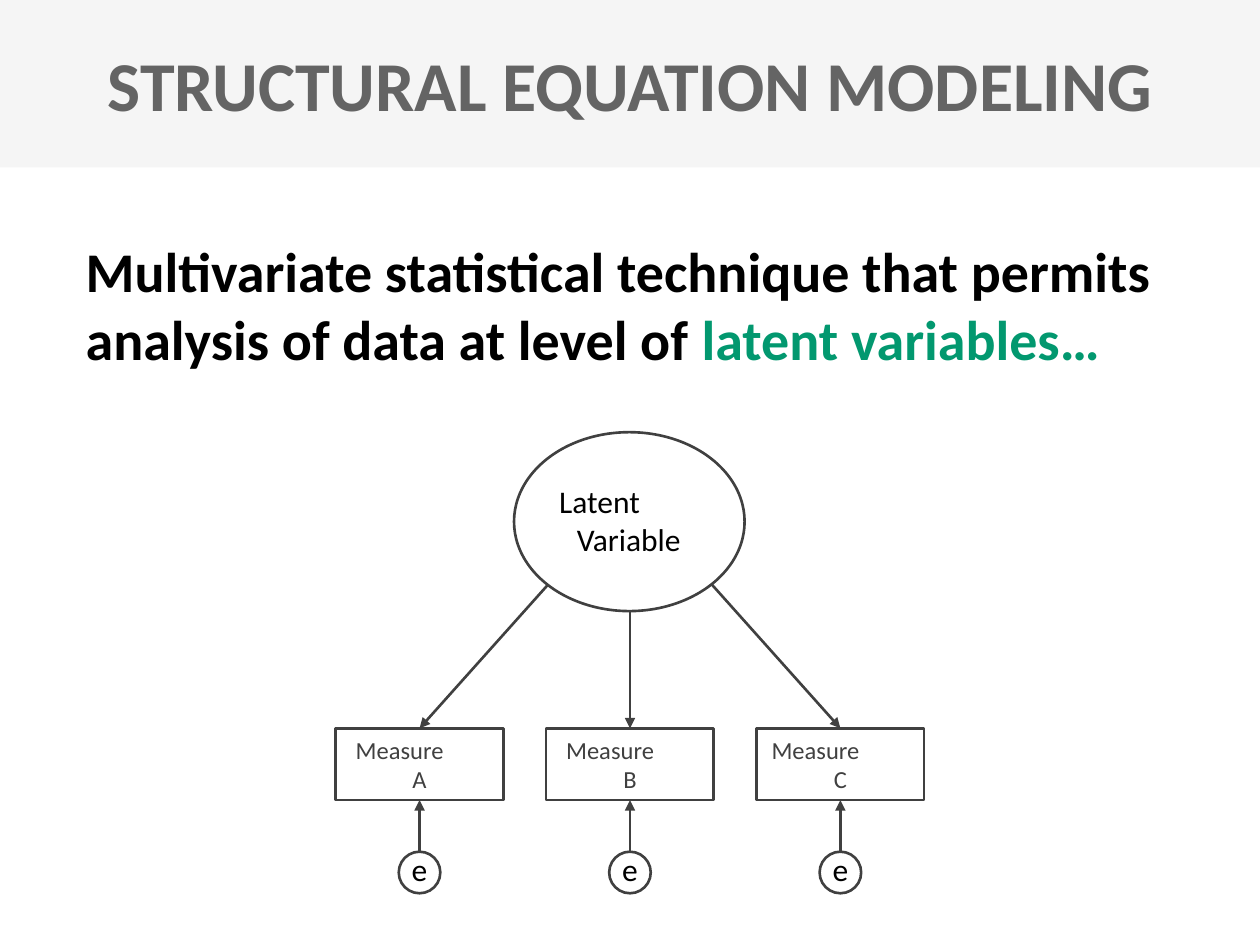
from lxml.etree import SubElement
from pptx import Presentation
from pptx.dml.color import RGBColor
from pptx.enum.shapes import MSO_CONNECTOR, MSO_SHAPE
from pptx.enum.text import MSO_ANCHOR, MSO_AUTO_SIZE, PP_ALIGN
from pptx.oxml.ns import qn
from pptx.util import Inches, Pt

FONT = "Calibri"
BAND, TITLE, BLACK, ACCENT, OUTLINE = "F5F5F5", "646464", "000000", "02986F", "404040"


def rgb(value):
    return RGBColor.from_string(value)


def place(shape, left, top, width, height):
    shape.left, shape.top = Inches(left), Inches(top)
    shape.width, shape.height = Inches(width), Inches(height)


def style_run(run, size, color, bold=False):
    font = run.font
    font.name, font.size, font.bold = FONT, Pt(size), bold
    font.color.rgb = rgb(color)


def add_label(frame, lines, size, color, indent=0):
    """Centre the lines; with an indent, the first line is set from the left."""
    frame.word_wrap = True
    frame.text = "\n".join(lines)
    for paragraph in frame.paragraphs:
        paragraph.alignment = PP_ALIGN.CENTER
        style_run(paragraph.runs[0], size, color)
    if indent:
        first = frame.paragraphs[0]
        first.alignment = PP_ALIGN.LEFT
        first._p.get_or_add_pPr().set("marL", str(Inches(indent)))


def add_outlined(slide, preset, left, top, width, height):
    shape = slide.shapes.add_shape(
        preset, Inches(left), Inches(top), Inches(width), Inches(height))
    shape.shadow.inherit = False
    shape.fill.background()
    shape.line.color.rgb = rgb(OUTLINE)
    shape.line.width = Pt(1.5)
    return shape


def add_text(slide, left, top, width, height, lines, size, indent=0):
    box = slide.shapes.add_textbox(
        Inches(left), Inches(top), Inches(width), Inches(height))
    add_label(box.text_frame, lines, size, BLACK, indent)


def add_arrow(slide, x1, y1, x2, y2):
    arrow = slide.shapes.add_connector(
        MSO_CONNECTOR.STRAIGHT, Inches(x1), Inches(y1), Inches(x2), Inches(y2))
    arrow.line.color.rgb = rgb(OUTLINE)
    arrow.line.width = Pt(1.5)
    SubElement(arrow.line._get_or_add_ln(), qn("a:tailEnd"), type="triangle")
    SubElement(arrow._element.spPr, qn("a:effectLst"))


def add_header(slide, left, top, width, height):
    title = slide.shapes.title
    band = slide.shapes.add_shape(
        MSO_SHAPE.RECTANGLE, Inches(left), Inches(top), Inches(width), Inches(height))
    band.shadow.inherit = False
    band.fill.solid()
    band.fill.fore_color.rgb = rgb(BAND)
    band.line.fill.background()
    title.element.addprevious(band.element)

    place(title, left, top + 0.44, width, 0.45)
    frame = title.text_frame
    frame.text = "STRUCTURAL EQUATION MODELING"
    frame.auto_size = MSO_AUTO_SIZE.NONE
    frame.vertical_anchor = MSO_ANCHOR.MIDDLE
    frame.paragraphs[0].alignment = PP_ALIGN.CENTER
    style_run(frame.paragraphs[0].runs[0], 40, TITLE, True)


def add_definition(slide, left, top, width, height):
    body = slide.placeholders[1]
    place(body, left, top, width, height)
    frame = body.text_frame
    frame.auto_size = MSO_AUTO_SIZE.NONE
    paragraph = frame.paragraphs[0]
    properties = paragraph._p.get_or_add_pPr()
    properties.set("marL", "0")
    properties.set("indent", "0")
    SubElement(properties, qn("a:buNone"))
    paragraph.space_before = Pt(0)
    for text, color in (
        ("Multivariate statistical technique that permits "
         "analysis of data at level of ", BLACK),
        ("latent variables…", ACCENT),
    ):
        run = paragraph.add_run()
        run.text = text
        style_run(run, 32, color, True)


def add_measure(slide, center, top, letter, indent):
    """Draw a measure box with its error term and arrow below."""
    width, height, error_size = 1.33, 0.57, 0.33
    error_top = top + 0.98
    box = add_outlined(
        slide, MSO_SHAPE.RECTANGLE, center - width / 2, top, width, height)
    add_label(box.text_frame, ["Measure", letter], 14, OUTLINE, indent)
    add_outlined(slide, MSO_SHAPE.OVAL, center - error_size / 2, error_top,
                 error_size, error_size)
    add_text(slide, center - 0.25, error_top - 0.06, 0.5, 0.4, ["e"], 18)
    add_arrow(slide, center, error_top, center, top + height)


def add_model(slide, left, top, width):
    """Draw the latent variable above its three measures."""
    middle = left + width / 2
    measure_top = top + 2.35
    add_outlined(slide, MSO_SHAPE.OVAL, middle - 0.92, top, 1.83, 1.42)
    add_text(slide, middle - 0.97, top + 0.35, 1.92, 0.71,
             ["Latent", "Variable"], 18, indent=0.31)
    measures = (("A", 0.06, 1.21), ("B", 0.06, 1.42), ("C", 0.02, 1.21))
    for column, (letter, indent, arrow_start) in enumerate(measures, start=-1):
        center = middle + column * 1.67
        add_measure(slide, center, measure_top, letter, indent)
        add_arrow(slide, middle + column * 0.65, top + arrow_start,
                  center, measure_top)


def main():
    presentation = Presentation()
    presentation.slide_width, presentation.slide_height = Inches(10), Inches(7.5)
    slide = presentation.slides.add_slide(presentation.slide_layouts[1])
    add_header(slide, 0, 0, 10, 1.33)
    add_definition(slide, 0.58, 1.83, 9.08, 1.18)
    add_model(slide, 2.67, 3.43, 4.66)
    presentation.save("out.pptx")


if __name__ == "__main__":
    main()
